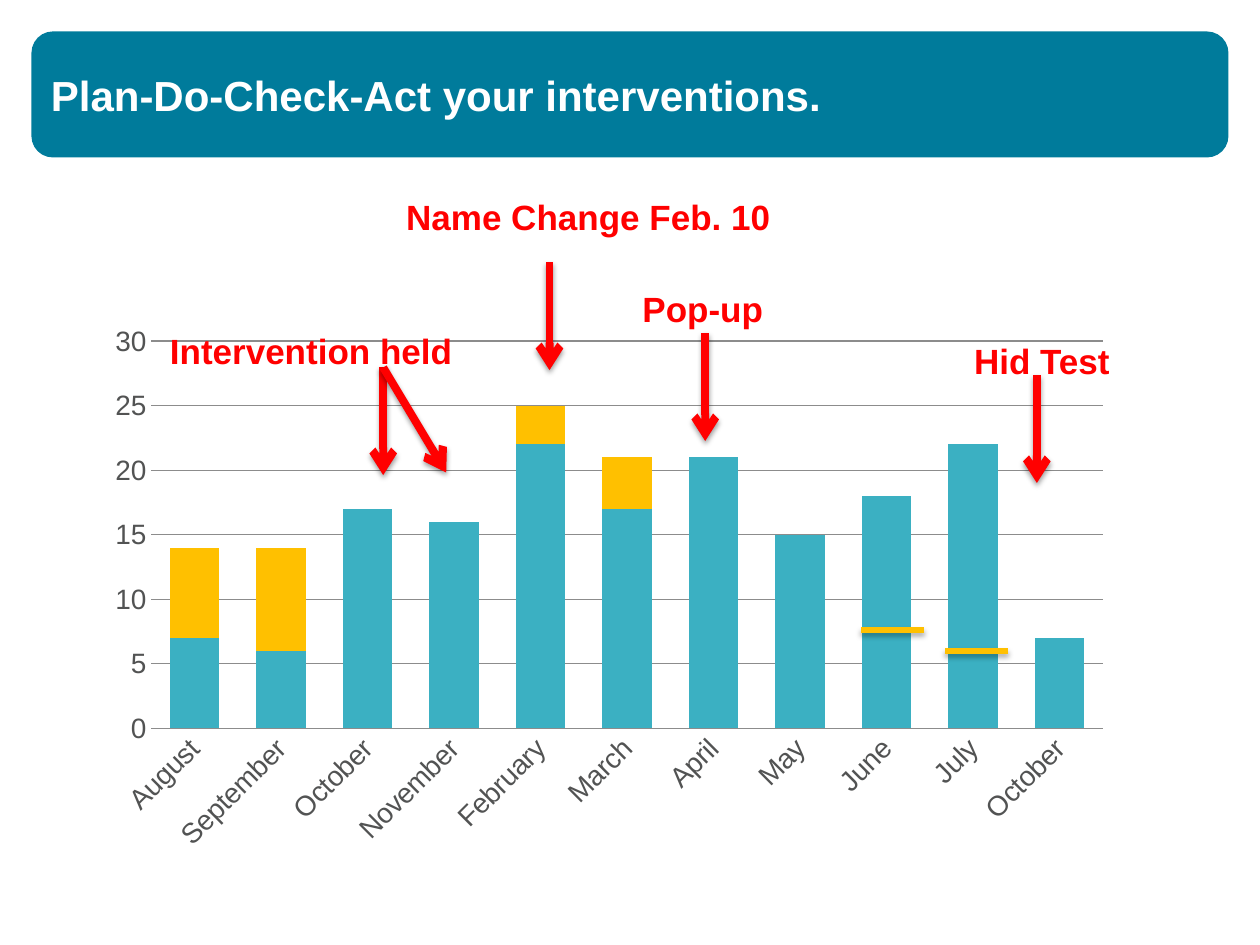
import dataclasses
import pptx
import pptx.util
import pptx.chart.data
import pptx.dml.color
import pptx.enum.chart
import pptx.enum.shapes
import pptx.enum.text
import pptx.oxml
import pptx.oxml.ns
from lxml import etree

Pt = pptx.util.Pt
qn = pptx.oxml.ns.qn


@dataclasses.dataclass(frozen=True)
class Theme:
    font: str = "Arial"
    band: str = "007B9B"
    bar: str = "3BB0C2"
    gold: str = "FFC000"
    red: str = "FF0000"
    white: str = "FFFFFF"
    grey: str = "525353"
    grid: str = "8C8C8C"
    title: int = 24
    label: int = 20
    axis: int = 16


THEME = Theme()

MONTHS = ["August", "September", "October", "November", "February", "March",
          "April", "May", "June", "July", "October"]
SERIES = [
    ("Series 1", [7, 6, 17, 16, 22, 17, 21, 15, 18, 22, 7], THEME.bar),
    ("Series 2", [7, 8, None, None, 3, 4, 0, 0, 0, 0, 0], THEME.gold),
]
ARROWS = [
    (314, 150, 314, 211.5),
    (403, 190.5, 403, 252),
    (219, 210, 219, 271.5),
    (219, 210, 255, 270),
    (592.5, 214.5, 592.5, 276),
]
LABELS = [
    ("Name Change Feb. 10", 225, 108, 225),
    ("Pop-up", 360, 160.5, 84),
    ("Intervention held", 90, 184.5, 183.5),
    ("Hid Test", 549.5, 190.5, 93),
]
MARKS = [(492, 360), (540, 372)]


def rgb(code):
    return pptx.dml.color.RGBColor.from_string(code)


def add_text(slide, text, left, top, width, height, size, color, wrap=True):
    box = slide.shapes.add_textbox(Pt(left), Pt(top), Pt(width), Pt(height))
    frame = box.text_frame
    frame.word_wrap = wrap
    if not wrap:
        frame.auto_size = pptx.enum.text.MSO_AUTO_SIZE.SHAPE_TO_FIT_TEXT
    run = frame.paragraphs[0].add_run()
    run.text = text
    run.font.name = THEME.font
    run.font.size = Pt(size)
    run.font.bold = True
    run.font.color.rgb = rgb(color)


def add_band(slide):
    band = slide.shapes.add_shape(
        pptx.enum.shapes.MSO_SHAPE.ROUNDED_RECTANGLE,
        Pt(18), Pt(18), Pt(684), Pt(72))
    band.adjustments[0] = 0.17
    band.shadow.inherit = False
    band.fill.solid()
    band.fill.fore_color.rgb = rgb(THEME.band)
    band.line.fill.background()


def add_line(slide, ends, color, width, alpha, drop, arrow=False):
    line = slide.shapes.add_connector(
        pptx.enum.shapes.MSO_CONNECTOR.STRAIGHT, *map(Pt, ends))
    line.line.color.rgb = rgb(color)
    line.line.width = Pt(width)
    props = line._element.spPr
    if arrow:
        etree.SubElement(props.find(qn("a:ln")), qn("a:tailEnd"), type="arrow")
    glow = etree.SubElement(props, qn("a:effectLst"))
    shade = etree.SubElement(
        glow, qn("a:outerShdw"), blurRad=str(Pt(3.1)), dist=str(Pt(drop)),
        dir="5400000", rotWithShape="0")
    tint = etree.SubElement(shade, qn("a:srgbClr"), val="000000")
    etree.SubElement(tint, qn("a:alpha"), val=str(alpha * 1000))


def set_plot(chart, **sides):
    area = chart._chartSpace.chart.plotArea
    for old in area.findall(qn("c:layout")):
        area.remove(old)
    layout = etree.Element(qn("c:layout"))
    area.insert(0, layout)
    manual = etree.SubElement(layout, qn("c:manualLayout"))
    parts = {"layoutTarget": "inner", "xMode": "edge", "yMode": "edge", **sides}
    for name, value in parts.items():
        etree.SubElement(manual, qn("c:" + name), val=str(value))


def style_axis(axis):
    axis.major_tick_mark = pptx.enum.chart.XL_TICK_MARK.NONE
    axis.minor_tick_mark = pptx.enum.chart.XL_TICK_MARK.NONE
    font = axis.tick_labels.font
    font.name = THEME.font
    font.size = Pt(THEME.axis)
    font.color.rgb = rgb(THEME.grey)


def add_chart(slide):
    data = pptx.chart.data.CategoryChartData()
    data.categories = MONTHS
    for name, values, _ in SERIES:
        data.add_series(name, values)
    chart = slide.shapes.add_chart(
        pptx.enum.chart.XL_CHART_TYPE.COLUMN_STACKED,
        Pt(54), Pt(180), Pt(588), Pt(312), data).chart
    chart.has_legend = False
    chart.has_title = False
    chart.font.name = THEME.font
    chart.font.size = Pt(10)
    chart.font.color.rgb = rgb(THEME.grey)
    set_plot(chart, x=0.055, y=0.048, w=0.925, h=0.709)

    plot = chart.plots[0]
    plot.gap_width = 75
    plot.overlap = 100
    plot.vary_by_categories = False
    for series, (_, _, color) in zip(plot.series, SERIES):
        series.format.fill.solid()
        series.format.fill.fore_color.rgb = rgb(color)
        series.invert_if_negative = False

    months, counts = chart.category_axis, chart.value_axis
    for axis in (months, counts):
        style_axis(axis)
    body = months._element.find(qn("c:txPr")).find(qn("a:bodyPr"))
    body.set("rot", "-2700000")
    counts.minimum_scale, counts.maximum_scale = 0, 30
    counts.major_unit = 5
    counts.format.line.fill.background()
    counts.has_major_gridlines = True
    for line in (months.format.line, counts.major_gridlines.format.line):
        line.color.rgb = rgb(THEME.grid)
        line.width = Pt(0.75)


def main():
    deck = pptx.Presentation()
    deck.slide_width, deck.slide_height = Pt(720), Pt(540)
    slide = deck.slides.add_slide(deck.slide_layouts[6])
    add_band(slide)
    add_chart(slide)
    for ends in ARROWS:
        add_line(slide, ends, THEME.red, 4.5, 38, 1.6, arrow=True)
    for text, left, top, width in LABELS:
        add_text(slide, text, left, top, width, 31.5,
                 size=THEME.label, color=THEME.red, wrap=False)
    add_text(slide, "Plan-Do-Check-Act your interventions.", 22, 36, 666, 96,
             size=THEME.title, color=THEME.white)
    for left, top in MARKS:
        add_line(slide, (left, top, left + 36, top), THEME.gold, 3, 35, 1.8)
    deck.save("out.pptx")


if __name__ == "__main__":
    main()
